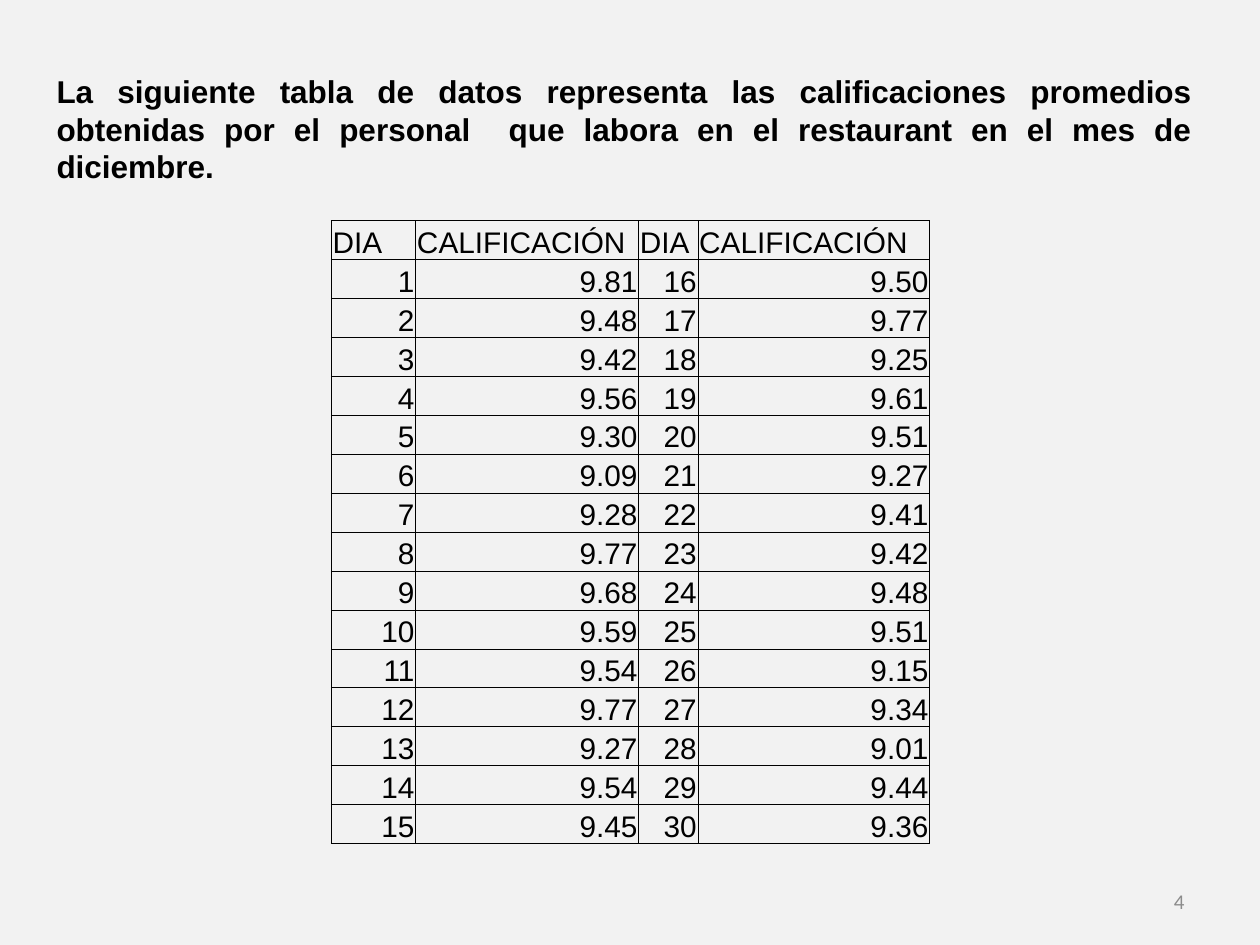
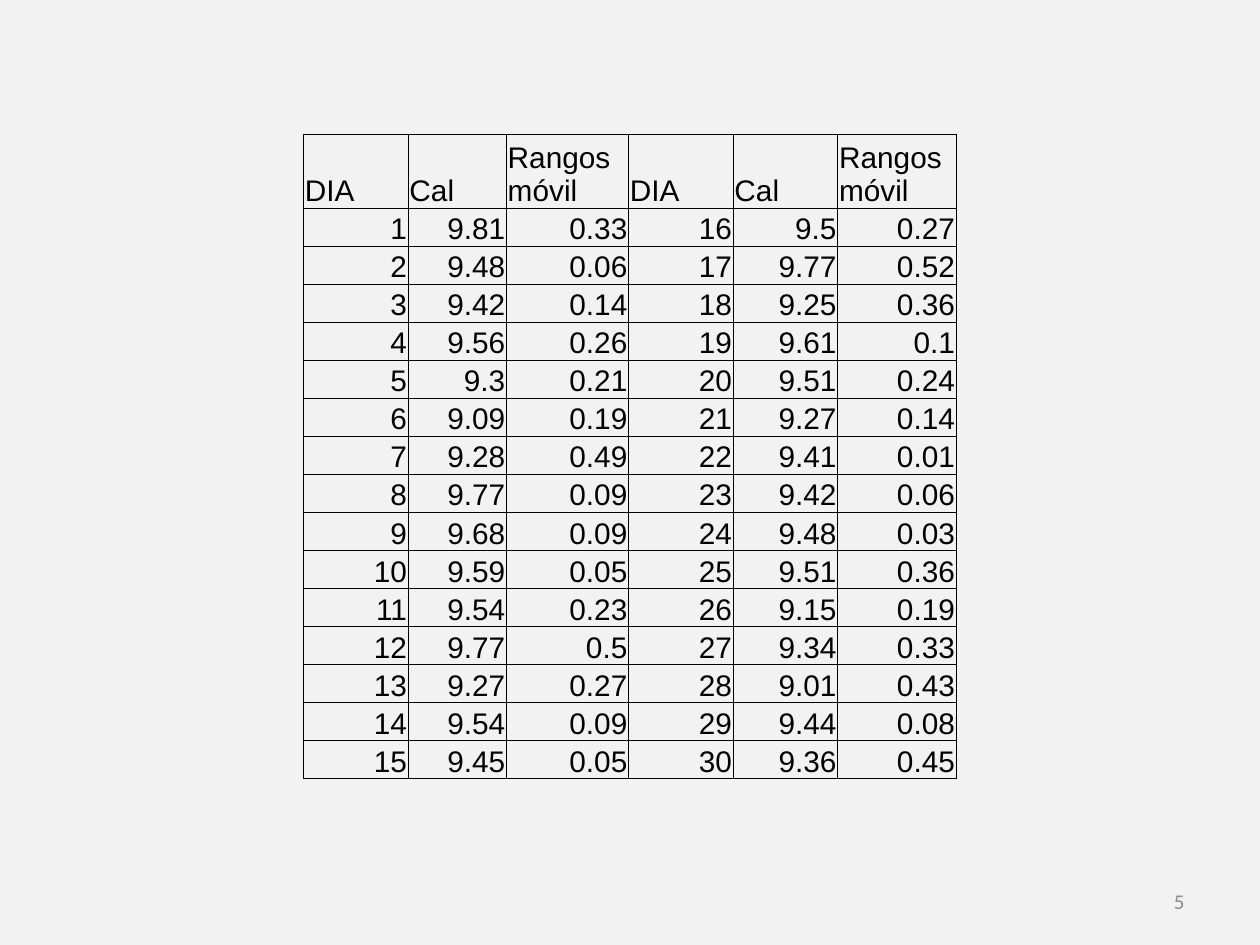
from dataclasses import dataclass

from lxml import etree
from pptx import Presentation, util as u
from pptx.dml.color import RGBColor
from pptx.enum import text
from pptx.oxml import ns

INTRO = ("La siguiente tabla de datos representa las calificaciones promedios "
         "obtenidas por el personal  que labora en el restaurant en el mes de diciembre.")
GRADES = [
    9.81, 9.48, 9.42, 9.56, 9.30, 9.09, 9.28, 9.77, 9.68, 9.59,
    9.54, 9.77, 9.27, 9.54, 9.45, 9.50, 9.77, 9.25, 9.61, 9.51,
    9.27, 9.41, 9.42, 9.48, 9.51, 9.15, 9.34, 9.01, 9.44, 9.36,
]
GRADE_TABLE = {
    "headings": ["DIA", "CALIFICACIÓN"],
    "left": 2.63, "top": 1.75,
    "columns": [0.67, 1.77, 0.47, 1.84],
    "header_height": 0.31, "table_height": 4.95,
}
RANGE_TABLE = {
    "headings": ["DIA", "Cal", "Rangos móvil"],
    "left": 2.41, "top": 1.07,
    "columns": [0.83, 0.78, 0.97, 0.83, 0.83, 0.94],
    "header_height": 0.58, "table_height": 5.11,
}


@dataclass(frozen=True)
class Theme:
    background: str = "F2F2F2"
    ink: str = "000000"
    muted: str = "8C8C8C"
    body_font: str = "Arial"
    number_font: str = "Calibri"
    intro_size: int = 18
    table_size: int = 17
    number_size: int = 12
    border_width: float = 0.5


THEME = Theme()


def style_para(para, size, font=THEME.body_font, color=THEME.ink, bold=False,
               align=text.PP_ALIGN.LEFT):
    para.alignment = align
    for span in para.runs:
        span.font.size = u.Pt(size)
        span.font.name = font
        span.font.bold = bold
        span.font.color.rgb = RGBColor.from_string(color)


def add_page(deck, number):
    page = deck.slides.add_slide(deck.slide_layouts[6])
    page.background.fill.solid()
    page.background.fill.fore_color.rgb = RGBColor.from_string(THEME.background)
    add_text(page, (7.17, 6.95, 2.33, 0.4), str(number), text.MSO_ANCHOR.MIDDLE,
             size=THEME.number_size, font=THEME.number_font, color=THEME.muted,
             align=text.PP_ALIGN.RIGHT)
    return page


def add_text(page, place, words, anchor, **style):
    box = page.shapes.add_textbox(*map(u.Inches, place))
    frame = box.text_frame
    frame.word_wrap = True
    frame.vertical_anchor = anchor
    frame.text = words
    style_para(frame.paragraphs[0], **style)


def add_borders(cell):
    properties = cell._tc.get_or_add_tcPr()
    for index, side in enumerate(("lnL", "lnR", "lnT", "lnB")):
        line = etree.Element(ns.qn(f"a:{side}"), w=str(u.Pt(THEME.border_width)))
        fill = etree.SubElement(line, ns.qn("a:solidFill"))
        etree.SubElement(fill, ns.qn("a:srgbClr"), val=THEME.ink)
        properties.insert(index, line)


def fill_cell(cell, words, align):
    cell.text = words
    cell.vertical_anchor = text.MSO_ANCHOR.BOTTOM
    cell.margin_left = cell.margin_right = cell.margin_top = u.Inches(0.01)
    cell.margin_bottom = 0
    cell.fill.background()
    style_para(cell.text_frame.paragraphs[0], THEME.table_size, align=align)
    add_borders(cell)


def add_day_table(page, layout, records):
    half = len(records) // 2
    rows = [layout["headings"] * 2]
    rows += [first + second for first, second in zip(records[:half], records[half:])]
    columns = layout["columns"]
    place = (layout["left"], layout["top"], sum(columns), layout["table_height"])
    table = page.shapes.add_table(len(rows), len(columns), *map(u.Inches, place)).table
    table.first_row = table.horz_banding = False
    for column, width in zip(table.columns, columns):
        column.width = u.Inches(width)
    row_height = (layout["table_height"] - layout["header_height"]) / half
    for index, values in enumerate(rows):
        table.rows[index].height = u.Inches(row_height if index else layout["header_height"])
        align = text.PP_ALIGN.RIGHT if index else text.PP_ALIGN.LEFT
        for cell, value in zip(table.rows[index].cells, values):
            fill_cell(cell, value, align)


def main():
    deck = Presentation()
    deck.slide_width, deck.slide_height = u.Inches(10), u.Inches(7.5)

    page = add_page(deck, 4)
    add_text(page, (0.35, 0.52, 9.21, 1.01), INTRO, text.MSO_ANCHOR.TOP,
             size=THEME.intro_size, bold=True, align=text.PP_ALIGN.JUSTIFY)
    add_day_table(page, GRADE_TABLE, [
        [str(day), f"{grade:.2f}"] for day, grade in enumerate(GRADES, 1)])

    page = add_page(deck, 5)
    next_grades = GRADES[1:] + GRADES[:1]
    add_day_table(page, RANGE_TABLE, [
        [str(day), f"{grade:g}", f"{round(abs(grade - following), 2):g}"]
        for day, (grade, following) in enumerate(zip(GRADES, next_grades), 1)])

    deck.save("out.pptx")


if __name__ == "__main__":
    main()
